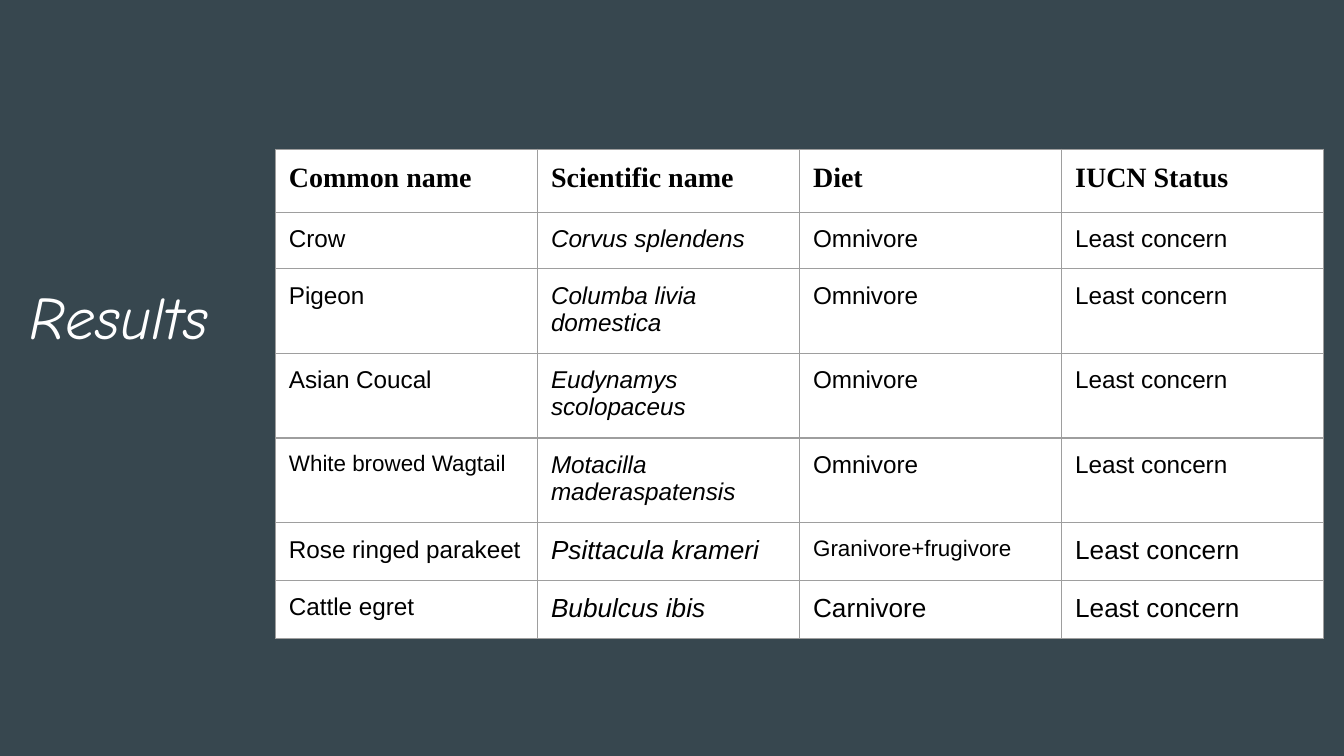
from pptx import Presentation
from pptx.dml.color import RGBColor
from pptx.enum.text import MSO_ANCHOR, PP_ALIGN
from pptx.oxml import parse_xml
from pptx.oxml.ns import nsdecls
from pptx.util import Inches, Pt

TOP = MSO_ANCHOR.TOP
LEFT = PP_ALIGN.LEFT
INSET = Inches(0.1)


def rgb(color):
    return RGBColor.from_string(color)


def add_run(p, text, size, font, color, bold=False, italic=False):
    p.alignment = LEFT
    r = p.add_run()
    r.text = text
    r.font.size = Pt(size)
    r.font.name = font
    r.font.bold = bold
    r.font.italic = italic
    r.font.color.rgb = rgb(color)


# Widescreen slide, 16:9
prs = Presentation()
prs.slide_width = Inches(10)
prs.slide_height = Inches(10 * 9 / 16)
s = prs.slides.add_slide(prs.slide_layouts[5])
s.background.fill.solid()
s.background.fill.fore_color.rgb = rgb("37474F")

# Title
title = s.shapes.title
title.left, title.top = Inches(0.12), Inches(1.98)
title.width, title.height = Inches(1.79), Inches(0.83)
tf = title.text_frame
tf.word_wrap = True
tf.vertical_anchor = TOP
tf.margin_left = tf.margin_right = tf.margin_top = tf.margin_bottom = INSET
add_run(tf.paragraphs[0], "Results", 32, "Comic Neue", "FFFFFF", italic=True)

# Bird data: row height, texts, text sizes
rows = [
    (0.47, ["Common name", "Scientific name", "Diet", "IUCN Status"], [15, 15, 15, 15]),
    (0.42, ["Crow", "Corvus splendens", "Omnivore", "Least concern"], [13, 13, 13, 13]),
    (0.63, ["Pigeon", "Columba livia domestica", "Omnivore", "Least concern"], [13, 13, 13, 13]),
    (0.63, ["Asian Coucal", "Eudynamys scolopaceus", "Omnivore", "Least concern"], [13, 13, 13, 13]),
    (0.63, ["White browed Wagtail", "Motacilla maderaspatensis", "Omnivore", "Least concern"], [12, 13, 13, 13]),
    (0.43, ["Rose ringed parakeet", "Psittacula krameri", "Granivore+frugivore", "Least concern"], [13, 14, 12, 14]),
    (0.43, ["Cattle egret", "Bubulcus ibis", "Carnivore", "Least concern"], [13, 14, 14, 14]),
]

# Table
table = s.shapes.add_table(len(rows), 4, Inches(2.05), Inches(1.11),
                           Inches(7.8), Inches(3.65)).table
for col in table.columns:
    col.width = Inches(1.95)

for i, (height, texts, sizes) in enumerate(rows):
    table.rows[i].height = Inches(height)
    header = i == 0
    for j, (text, size) in enumerate(zip(texts, sizes)):
        cell = table.cell(i, j)
        cell.vertical_anchor = TOP
        cell.margin_left = cell.margin_right = INSET
        cell.margin_top = cell.margin_bottom = INSET
        add_run(cell.text_frame.paragraphs[0], text, size,
                "Times New Roman" if header else "Arial", "000000",
                bold=header, italic=j == 1 and not header)
        # Borders go before the fill in the cell properties
        tc_pr = cell._tc.get_or_add_tcPr()
        for side in ("lnL", "lnR", "lnT", "lnB"):
            tc_pr.append(parse_xml(
                f'<a:{side} {nsdecls("a")} w="{Pt(0.75)}"><a:solidFill>'
                f'<a:srgbClr val="9E9E9E"/></a:solidFill></a:{side}>'))
        cell.fill.solid()
        cell.fill.fore_color.rgb = rgb("FFFFFF")

prs.save("out.pptx")
